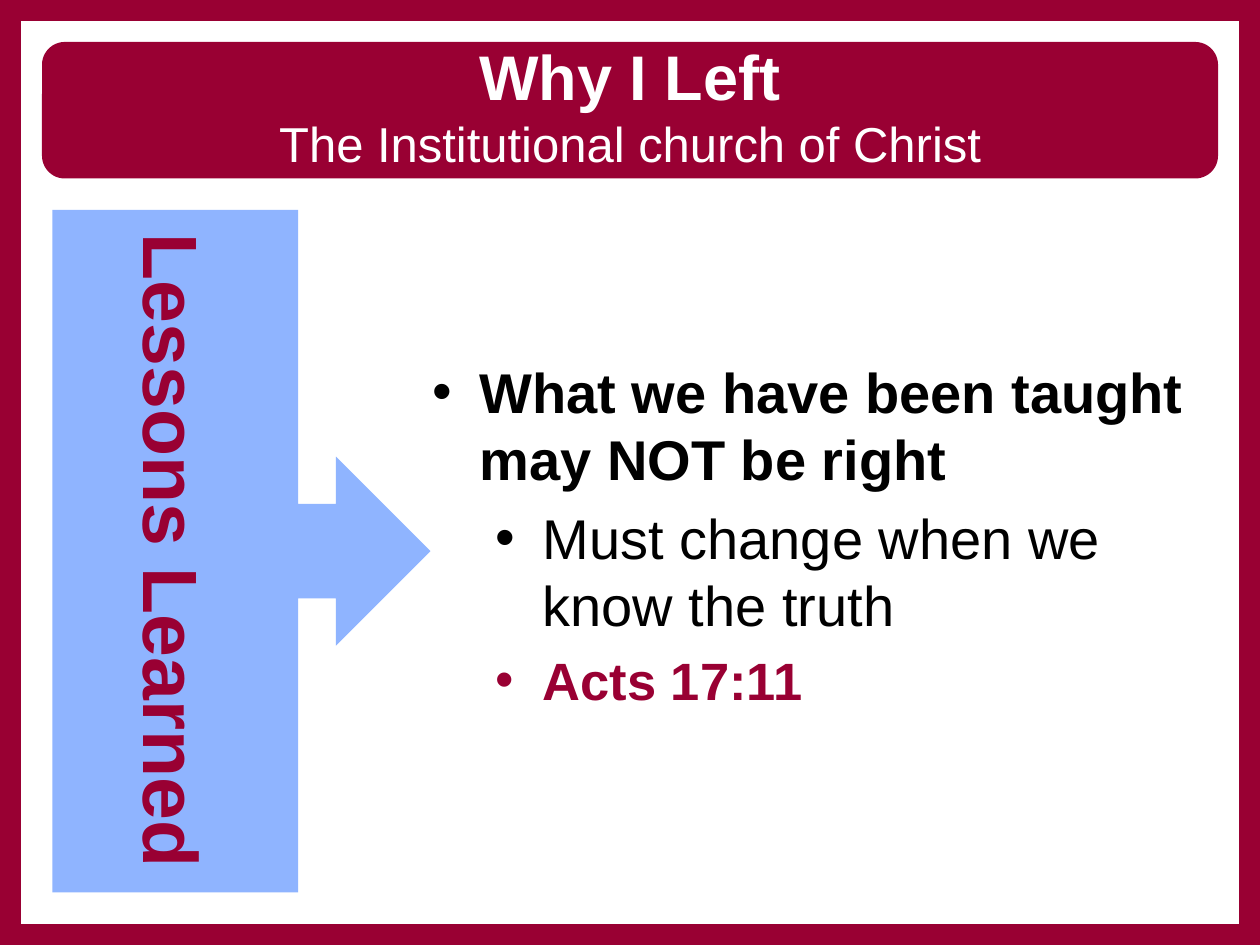
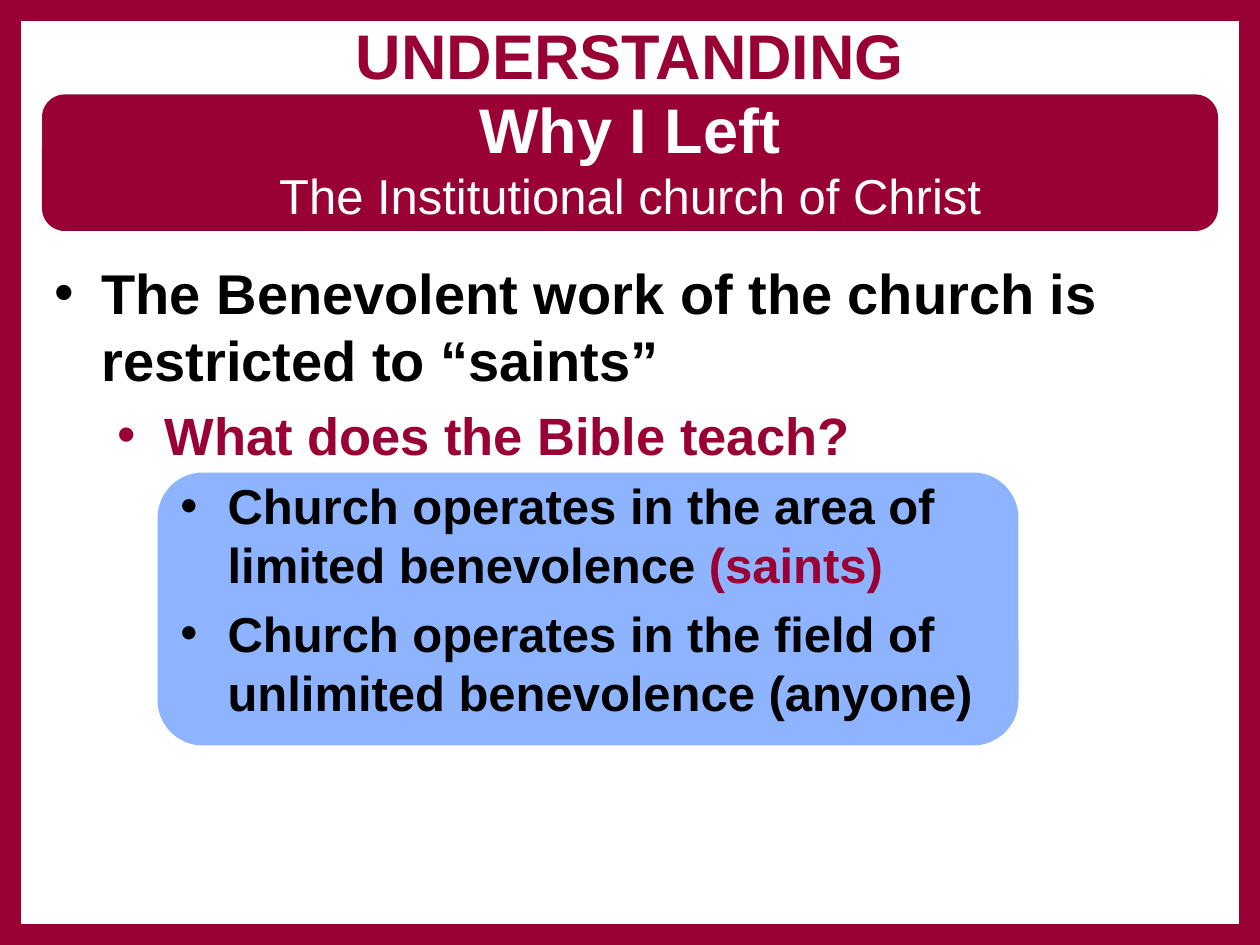
from pptx import Presentation
from pptx.dml.color import RGBColor
from pptx.enum.shapes import MSO_SHAPE as Shape
from pptx.enum.text import MSO_AUTO_SIZE as AutoSize, PP_ALIGN as Align
from pptx.oxml.ns import qn
from pptx.util import Pt
from lxml.etree import SubElement

CRIMSON = RGBColor(0x99, 0x00, 0x33)
BLUE = RGBColor(0x8F, 0xB4, 0xFF)
BLACK = RGBColor(0, 0, 0)
WHITE = RGBColor(255, 255, 255)
WIDTH, HEIGHT, EDGE = 720, 540, 12
FONT = "Arial"


class SlideBuilder:
    """Holds the deck style and the slide being filled."""

    def __init__(self, deck):
        self.deck = deck
        self.page = None

    def new_page(self):
        self.page = self.deck.slides.add_slide(self.deck.slide_layouts[6])

    def shape(self, kind, left, top, width, height, color):
        item = self.page.shapes.add_shape(kind, Pt(left), Pt(top), Pt(width), Pt(height))
        item.shadow.inherit = False
        item.fill.solid()
        item.fill.fore_color.rgb = color
        item.line.fill.background()

    def frame(self):
        for left in (0, WIDTH - EDGE):
            self.shape(Shape.RECTANGLE, left, 0, EDGE, HEIGHT, CRIMSON)
        for top in (0, HEIGHT - EDGE):
            self.shape(Shape.RECTANGLE, 0, top, WIDTH, EDGE, CRIMSON)

    def text_box(self, left, top, width, height):
        box = self.page.shapes.add_textbox(Pt(left), Pt(top), Pt(width), Pt(height))
        box.text_frame.word_wrap = True
        return box

    def span(self, para, text, size, color, bold=True):
        style = {"name": FONT, "size": Pt(size), "bold": bold}
        for index, line in enumerate(text.split("\n")):
            if index:
                para.add_line_break()
            span = para.add_run()
            span.text = line
            for key, value in style.items():
                setattr(span.font, key, value)
            span.font.color.rgb = color

    def paragraph(self, frame, index):
        return frame.add_paragraph() if index else frame.paragraphs[0]

    def heading(self, left, top, width, height, lines, rotation=0):
        box = self.text_box(left, top, width, height)
        box.rotation = rotation
        box.text_frame.auto_size = AutoSize.SHAPE_TO_FIT_TEXT
        for index, line in enumerate(lines):
            para = self.paragraph(box.text_frame, index)
            para.alignment = Align.CENTER
            self.span(para, *line)

    def banner(self, top):
        self.shape(Shape.ROUNDED_RECTANGLE, 24, top, 672, 78, CRIMSON)
        self.heading(24, top - 6, 672, 85, [
            ("Why I Left", 36, WHITE),
            ("The Institutional church of Christ", 28, WHITE, False),
        ])

    def bullets(self, left, top, width, height, items, inset):
        """Each item is a level followed by its spans."""
        frame = self.text_box(left, top, width, height).text_frame
        frame.margin_top = Pt(inset)
        for index, (level, *spans) in enumerate(items):
            para = self.paragraph(frame, index)
            para.level = level
            para.space_before = Pt(0.2 * spans[0][1] if index else 0)
            props = para._p.get_or_add_pPr()
            props.set("marL", str(Pt(27 + 36 * level)))
            props.set("indent", str(Pt(-27)))
            SubElement(props, qn("a:buFont"), typeface=FONT)
            SubElement(props, qn("a:buChar"), char="•")
            for span in spans:
                self.span(para, *span)


def build_lessons(builder):
    builder.new_page()
    builder.bullets(240, 108, 462, 402, [
        (0, ("What we have been taught may NOT be right", 32, BLACK)),
        (1, ("Must change when we know the truth", 32, BLACK, False)),
        (1, ("Acts 17:11", 30, CRIMSON)),
    ], inset=96.4)
    builder.frame()
    builder.banner(24)
    # Callout pointing at the lessons
    builder.shape(Shape.RIGHT_ARROW_CALLOUT, 30, 120, 216, 390, BLUE)
    builder.heading(-96, 284.5, 390, 60.5, [("Lessons Learned", 44, CRIMSON)], rotation=90)


def build_understanding(builder):
    builder.new_page()
    # Panel behind the two views
    builder.shape(Shape.ROUNDED_RECTANGLE, 90, 270, 492, 156, BLUE)
    builder.frame()
    builder.banner(54)
    builder.heading(12, 6, 696, 51, [("UNDERSTANDING", 36, CRIMSON)])
    builder.bullets(24, 144, 678, 294, [
        (0, ("The Benevolent work of the church is restricted to “saints”", 32, BLACK)),
        (1, ("What does the Bible teach?", 30, CRIMSON)),
        (2, ("Church operates in the area of\nlimited benevolence ", 28, BLACK),
            ("(saints)", 28, CRIMSON)),
        (2, ("Church operates in the field of\nunlimited benevolence (anyone)", 28, BLACK)),
    ], inset=3.6)


def main():
    deck = Presentation()
    deck.slide_width, deck.slide_height = Pt(WIDTH), Pt(HEIGHT)
    builder = SlideBuilder(deck)
    build_lessons(builder)
    build_understanding(builder)
    deck.save("out.pptx")


if __name__ == "__main__":
    main()
